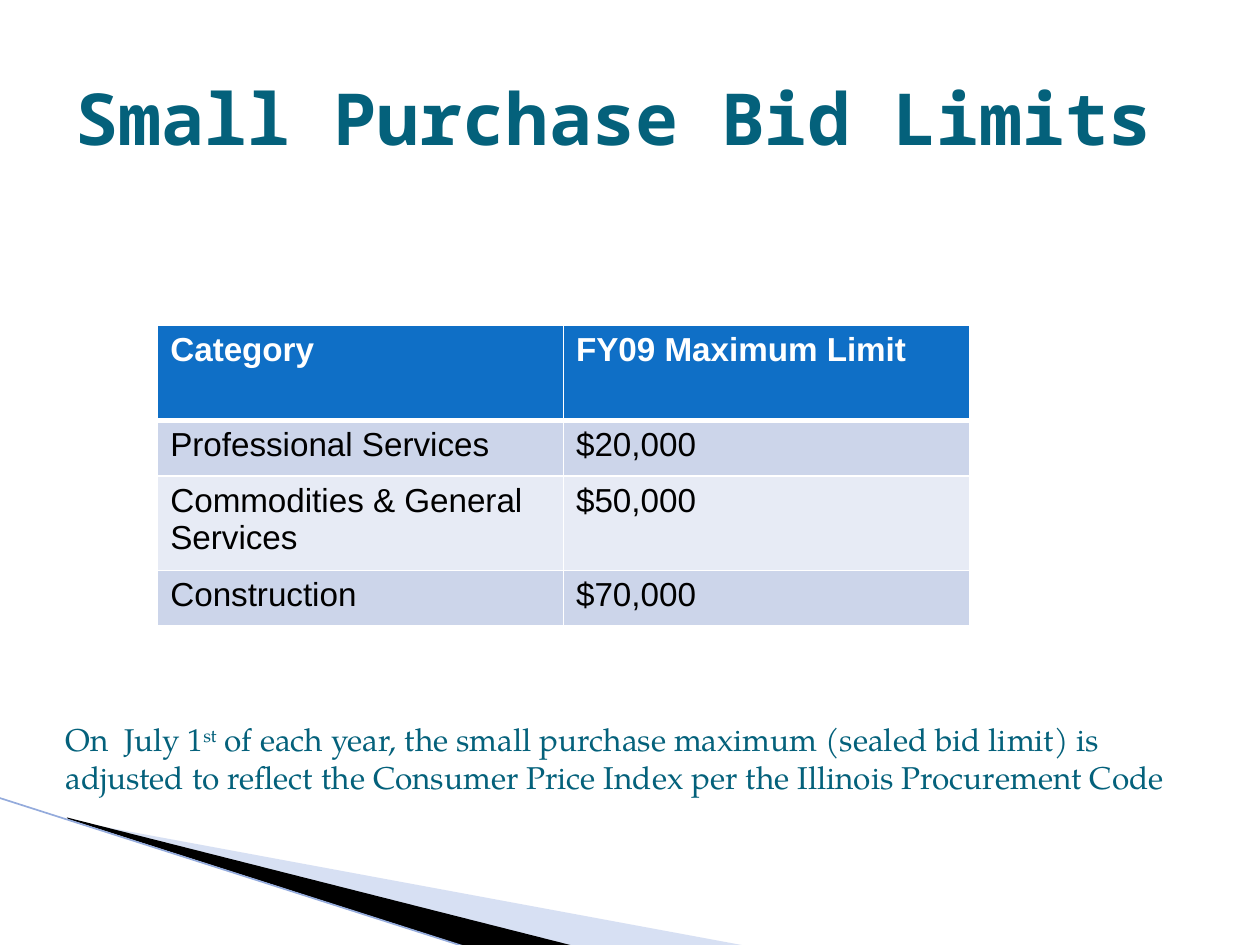
from lxml import etree
from pptx import Presentation
from pptx.dml.color import RGBColor
from pptx.enum.shapes import MSO_CONNECTOR
from pptx.enum.text import MSO_ANCHOR, MSO_AUTO_SIZE, PP_ALIGN
from pptx.oxml.ns import qn
from pptx.util import Cm, Pt

STRAIGHT = MSO_CONNECTOR.STRAIGHT
MIDDLE = MSO_ANCHOR.MIDDLE
LEFT = PP_ALIGN.LEFT
NO_AUTOFIT = MSO_AUTO_SIZE.NONE
GROW = MSO_AUTO_SIZE.SHAPE_TO_FIT_TEXT

TITLE = "Small Purchase Bid Limits"
LIMITS = [
    ("Category", "FY09 Maximum Limit"),
    ("Professional Services", "$20,000"),
    ("Commodities & General Services", "$50,000"),
    ("Construction", "$70,000"),
]
NOTE = [
    ("On  July 1", 0),
    ("st", 30000),
    (" of each year, the small purchase maximum (sealed bid limit) is adjusted "
     "to reflect the Consumer Price Index per the Illinois Procurement Code", 0),
]

TEAL, WHITE, BLACK = "04617B", "FFFFFF", "000000"
HEADER_FILL = "0F6FC6"
BAND_FILLS = ["CCD5EA", "E7EBF5"]
ROW_HEIGHTS = [1.93, 1.12, 1.9, 1.12]
COLUMN_WIDTH = 8.18
WEDGES = [
    ("9DB2E1", 40, [(1.4, 16.54), (15.11, 19.08), (11.58, 19.08), (1.4, 16.51)]),
    (BLACK, 100, [(1.35, 16.48), (11.61, 19.08), (9.45, 19.1), (1.37, 16.51)]),
]
EDGE = [(-0.03, 16.08), (9.42, 19.1)]


def color(hex_value):
    return RGBColor.from_string(hex_value)


def paint(part, hex_value):
    part.fill.solid()
    part.fill.fore_color.rgb = color(hex_value)


def write(paragraph, text, size=18, font="Arial", ink=BLACK, bold=False, baseline=0):
    run = paragraph.add_run()
    run.text = text
    run.font.size = Pt(size)
    run.font.name = font
    run.font.bold = bold
    run.font.color.rgb = color(ink)
    if baseline:
        run._r.get_or_add_rPr().set("baseline", str(baseline))


def place(part, left, top, width, height):
    part.left, part.top, part.width, part.height = map(Cm, (left, top, width, height))


def add_wedge(slide, hex_value, opacity, corners):
    start, *others = [(Cm(x), Cm(y)) for x, y in corners]
    builder = slide.shapes.build_freeform(*start)
    builder.add_line_segments(others)
    wedge = builder.convert_to_shape()
    wedge.shadow.inherit = False
    wedge.line.fill.background()
    paint(wedge, hex_value)
    if opacity < 100:
        tint = wedge._element.spPr.find(".//" + qn("a:srgbClr"))
        etree.SubElement(tint, qn("a:alpha"), val=str(opacity * 1000))


def add_edge(slide):
    (x1, y1), (x2, y2) = EDGE
    edge = slide.shapes.add_connector(STRAIGHT, Cm(x1), Cm(y1), Cm(x2), Cm(y2))
    edge.line.color.rgb = color("94ABDC")
    edge.line.width = Pt(0.95)
    etree.SubElement(edge._element.spPr, qn("a:effectLst"))


def set_borders(cell, bottom, top):
    properties = cell._tc.get_or_add_tcPr()
    widths = {"a:lnL": 1, "a:lnR": 1, "a:lnT": top, "a:lnB": bottom}
    for index, (side, width) in enumerate(widths.items()):
        border = etree.Element(qn(side), w=str(Pt(width)))
        fill = etree.SubElement(border, qn("a:solidFill"))
        etree.SubElement(fill, qn("a:srgbClr"), val=WHITE)
        properties.insert(index, border)


def add_limits(slide):
    rows, columns = len(LIMITS), len(LIMITS[0])
    table = slide.shapes.add_table(
        rows, columns, Cm(3.18), Cm(6.55),
        Cm(COLUMN_WIDTH * columns), Cm(sum(ROW_HEIGHTS))).table
    for column in table.columns:
        column.width = Cm(COLUMN_WIDTH)
    for r, entries in enumerate(LIMITS):
        table.rows[r].height = Cm(ROW_HEIGHTS[r])
        header = r == 0
        for c, entry in enumerate(entries):
            cell = table.cell(r, c)
            paint(cell, HEADER_FILL if header else BAND_FILLS[(r - 1) % 2])
            set_borders(cell, bottom=3 if header else 1, top=3 if r == 1 else 1)
            write(cell.text_frame.paragraphs[0], entry, size=19,
                  ink=WHITE if header else BLACK, bold=header)


def add_title(slide):
    title = slide.shapes.title
    place(title, 1.27, 0.76, 22.86, 3.18)
    frame = title.text_frame
    frame.vertical_anchor = MIDDLE
    frame.auto_size = NO_AUTOFIT
    frame.paragraphs[0].alignment = LEFT
    write(frame.paragraphs[0], TITLE, size=41, font="Noto Sans Mono", ink=TEAL, bold=True)


def add_note(slide):
    note = slide.shapes.add_textbox(Cm(1.07), Cm(14.4), Cm(23.5), Cm(1.8))
    frame = note.text_frame
    frame.word_wrap = True
    frame.auto_size = GROW
    for text, baseline in NOTE:
        write(frame.paragraphs[0], text, font="TeX Gyre Pagella", ink=TEAL, baseline=baseline)


def main():
    deck = Presentation()
    deck.slide_width, deck.slide_height = Cm(25.4), Cm(19.05)
    slide = deck.slides.add_slide(deck.slide_layouts[5])
    for wedge in WEDGES:
        add_wedge(slide, *wedge)
    add_edge(slide)
    add_limits(slide)
    add_title(slide)
    add_note(slide)
    deck.save("out.pptx")


if __name__ == "__main__":
    main()
